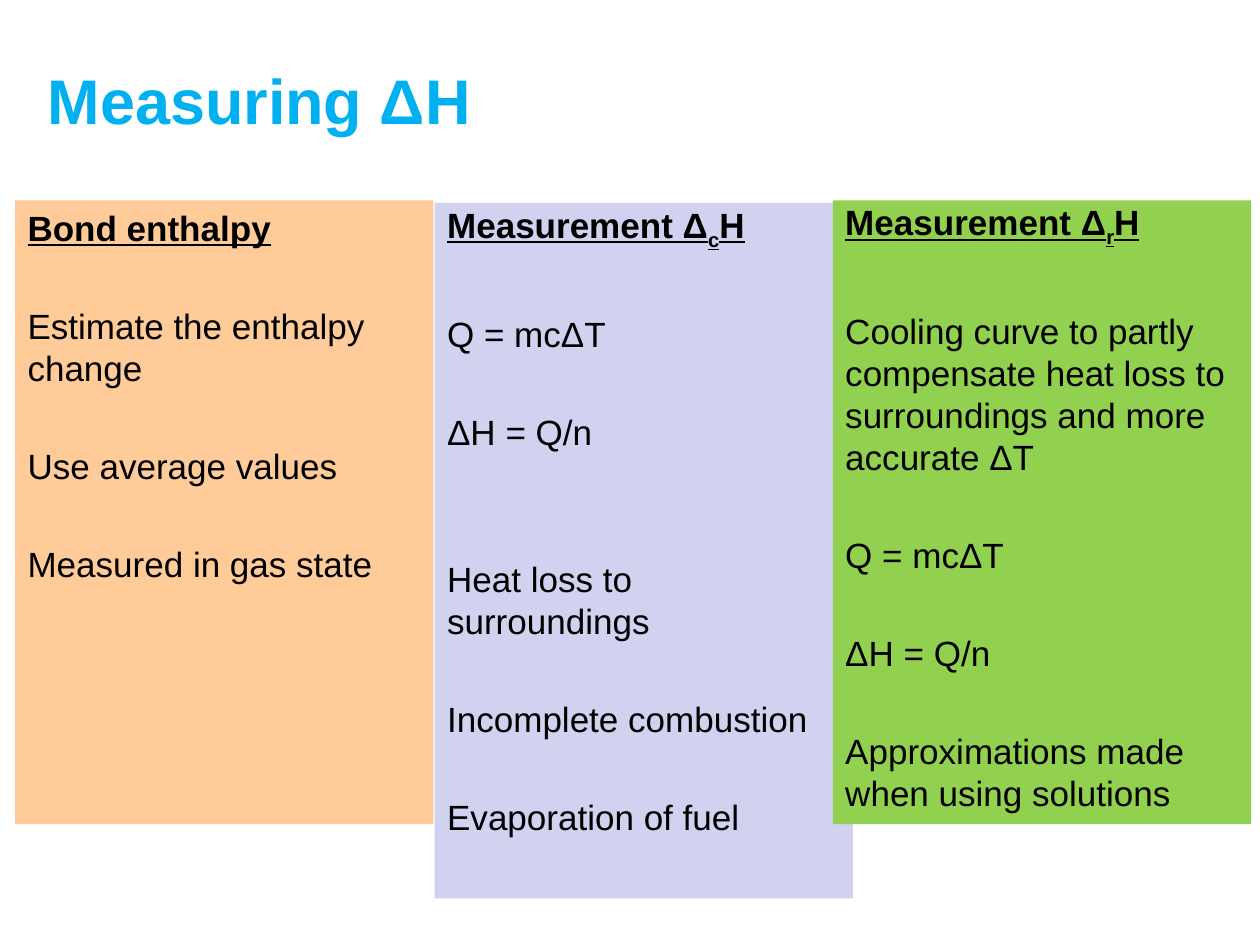
from pptx import Presentation
from pptx.dml.color import RGBColor
from pptx.enum.shapes import MSO_SHAPE
from pptx.enum.text import MSO_ANCHOR, PP_ALIGN
from pptx.util import Inches, Pt


def style(run, size, color, bold=False):
    run.font.name = "Arial"
    run.font.size = Pt(size)
    run.font.bold = bold
    run.font.color.rgb = RGBColor.from_string(color)


deck = Presentation()
deck.slide_width = Inches(10)
deck.slide_height = Inches(7.5)
slide = deck.slides.add_slide(deck.slide_layouts[6])

title = slide.shapes.add_textbox(Inches(0.28), Inches(0.16), Inches(9), Inches(1.25))
frame = title.text_frame
frame.word_wrap = True
frame.vertical_anchor = MSO_ANCHOR.MIDDLE
frame.text = "Measuring ΔH"
style(frame.paragraphs[0].runs[0], 36, "00B0F0", True)

heat = ["Q = mcΔT", "ΔH = Q/n"]
columns = [
    (0.12, 1.59, 4.95, "FFCC99", ["Bond enthalpy"],
     ["Estimate the enthalpy change", "Use average values", "Measured in gas state"]),
    (3.45, 1.61, 5.52, "D1D1F0", ["Measurement Δ", "c", "H"],
     heat + ["Heat loss to surroundings", "Incomplete combustion", "Evaporation of fuel"]),
    (6.61, 1.59, 4.95, "92D050", ["Measurement Δ", "r", "H"],
     ["Cooling curve to partly compensate heat loss to surroundings and more accurate ΔT"]
     + heat + ["Approximations made when using solutions"]),
]

for left, top, height, fill, head, lines in columns:
    box = slide.shapes.add_shape(
        MSO_SHAPE.RECTANGLE, Inches(left), Inches(top), Inches(3.32), Inches(height))
    box.shadow.inherit = False
    box.fill.solid()
    box.fill.fore_color.rgb = RGBColor.from_string(fill)
    box.line.fill.background()
    frame = box.text_frame
    frame.word_wrap = True
    frame.vertical_anchor = MSO_ANCHOR.TOP

    para = frame.paragraphs[0]
    para.alignment = PP_ALIGN.LEFT
    para.line_spacing = Pt(24)
    para.space_after = Pt(3 if len(head) > 1 else 0)
    for index, part in enumerate(head):
        run = para.add_run()
        run.text = part
        style(run, 20, "000000", True)
        run.font.underline = True
        if index == 1:
            run.font._element.set("baseline", "-25000")

    for line in lines:
        para = frame.add_paragraph()
        para.text = line
        para.alignment = PP_ALIGN.LEFT
        para.line_spacing = Pt(24)
        para.space_before = Pt(60 if line.startswith("Heat") else 32)
        style(para.runs[0], 20, "000000")

deck.save("out.pptx")
